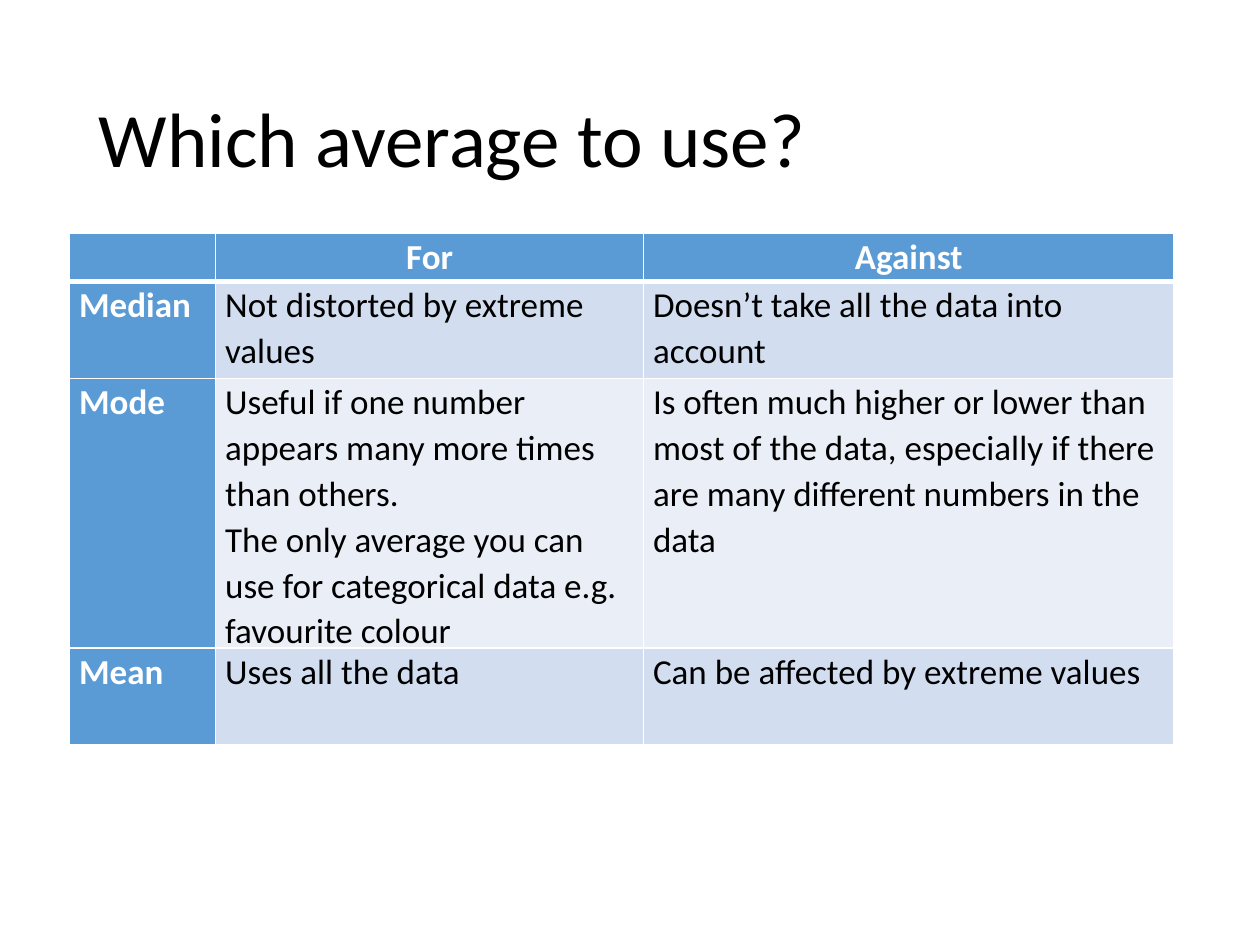
import dataclasses

import pptx
import pptx.dml.color
import pptx.enum.text
import pptx.oxml
import pptx.oxml.ns
import pptx.util

Pt = pptx.util.Pt
Align = pptx.enum.text.PP_ALIGN
Anchor = pptx.enum.text.MSO_ANCHOR


@dataclasses.dataclass(frozen=True)
class Theme:
    font: str = "Calibri"
    title_size: int = 44
    cell_size: int = 20
    ink: str = "000000"
    white: str = "FFFFFF"
    accent: str = "5B9BD5"
    bands: tuple = ("D2DEEF", "EAEFF7")


THEME = Theme()
COLUMN_WIDTHS = (83.5, 244.5, 303)
ROW_HEIGHTS = (27.4, 55.4, 133.2, 55.4)
ROWS = (
    ("", "For", "Against"),
    ("Median", "Not distorted by extreme values", "Doesn’t take all the data into account"),
    (
        "Mode",
        "Useful if one number appears many more times than others.\n"
        "The only average you can use for categorical data e.g. favourite colour",
        "Is often much higher or lower than most of the data, "
        "especially if there are many different numbers in the data",
    ),
    ("Mean", "Uses all the data", "Can be affected by extreme values"),
)


def rgb(value):
    return pptx.dml.color.RGBColor.from_string(value)


def style_paragraph(para, size, color, spacing, bold=False, align=Align.LEFT):
    para.alignment = align
    para.line_spacing = spacing
    para.font.name = THEME.font
    para.font.size = Pt(size)
    para.font.bold = bold
    para.font.color.rgb = rgb(color)


def add_title(page, text):
    box = page.shapes.add_textbox(Pt(49.5), Pt(29), Pt(621), Pt(104.4))
    frame = box.text_frame
    frame.word_wrap = True
    frame.vertical_anchor = Anchor.MIDDLE
    frame.text = text
    style_paragraph(frame.paragraphs[0], THEME.title_size, THEME.ink, 0.9)


def set_borders(cell, bottom_width):
    properties = cell._tc.get_or_add_tcPr()
    widths = {"lnL": 1, "lnR": 1, "lnT": 1, "lnB": bottom_width}
    for position, (side, width) in enumerate(widths.items()):
        line = pptx.oxml.parse_xml(
            f'<a:{side} {pptx.oxml.ns.nsdecls("a")} w="{Pt(width)}">'
            f'<a:solidFill><a:srgbClr val="{THEME.white}"/></a:solidFill></a:{side}>'
        )
        properties.insert(position, line)


def fill_cell(cell, text, row, column):
    heading = row == 0 or column == 0
    cell.text = text
    cell.margin_left = cell.margin_right = Pt(5.4)
    cell.margin_top = cell.margin_bottom = 0
    cell.fill.solid()
    cell.fill.fore_color.rgb = rgb(THEME.accent if heading else THEME.bands[(row - 1) % 2])
    set_borders(cell, 3 if row == 0 else 1)
    for para in cell.text_frame.paragraphs:
        style_paragraph(
            para,
            THEME.cell_size,
            THEME.white if heading else THEME.ink,
            1.07,
            bold=heading,
            align=Align.CENTER if row == 0 else Align.LEFT,
        )


def add_comparison(page):
    frame = page.shapes.add_table(
        len(ROWS), len(COLUMN_WIDTHS), Pt(39.8), Pt(133.4),
        Pt(sum(COLUMN_WIDTHS)), Pt(sum(ROW_HEIGHTS)),
    )
    table = frame.table
    for column, width in zip(table.columns, COLUMN_WIDTHS):
        column.width = Pt(width)
    for row, height in zip(table.rows, ROW_HEIGHTS):
        row.height = Pt(height)
    for row, texts in enumerate(ROWS):
        for column, text in enumerate(texts):
            fill_cell(table.cell(row, column), text, row, column)


def main():
    deck = pptx.Presentation()
    deck.slide_width, deck.slide_height = Pt(720), Pt(540)
    page = deck.slides.add_slide(deck.slide_layouts[6])
    add_title(page, "Which average to use?")
    add_comparison(page)
    deck.save("out.pptx")


if __name__ == "__main__":
    main()
